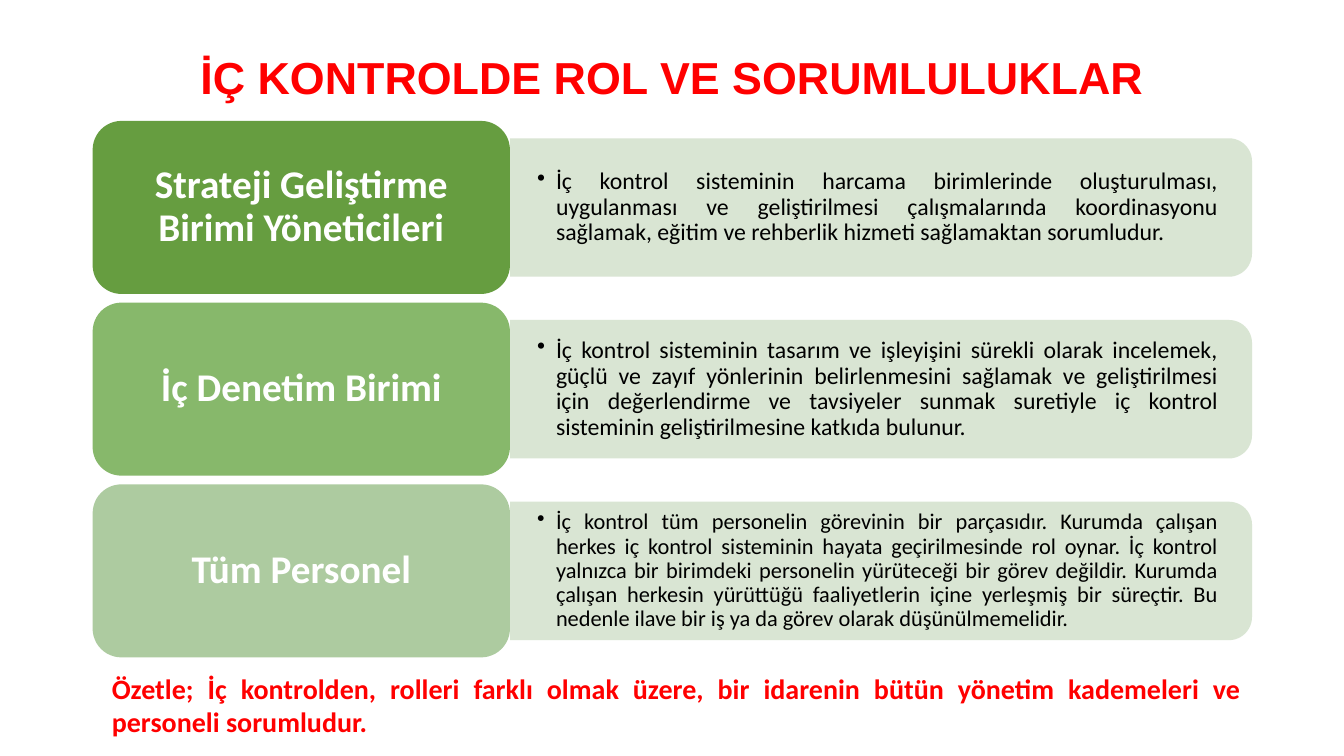
from pptx import Presentation
from pptx.util import Pt
from pptx.dml.color import RGBColor
from pptx.enum.shapes import MSO_SHAPE
from pptx.enum.text import MSO_ANCHOR, PP_ALIGN
from pptx.oxml.ns import qn
from lxml.etree import SubElement

TITLE = "İÇ KONTROLDE ROL VE SORUMLULUKLAR"
ROLES = [
    ("Strateji Geliştirme Birimi Yöneticileri", "dark", 17,
     "İç kontrol sisteminin harcama birimlerinde oluşturulması, uygulanması ve "
     "geliştirilmesi çalışmalarında koordinasyonu sağlamak, eğitim ve rehberlik "
     "hizmeti sağlamaktan sorumludur."),
    ("İç Denetim Birimi", "mid", 17,
     "İç kontrol sisteminin tasarım ve işleyişini sürekli olarak incelemek, güçlü "
     "ve zayıf yönlerinin belirlenmesini sağlamak ve geliştirilmesi için "
     "değerlendirme ve tavsiyeler sunmak suretiyle iç kontrol sisteminin "
     "geliştirilmesine katkıda bulunur."),
    ("Tüm Personel", "light", 16,
     "İç kontrol tüm personelin görevinin bir parçasıdır. Kurumda çalışan herkes "
     "iç kontrol sisteminin hayata geçirilmesinde rol oynar. İç kontrol yalnızca "
     "bir birimdeki personelin yürüteceği bir görev değildir. Kurumda çalışan "
     "herkesin yürüttüğü faaliyetlerin içine yerleşmiş bir süreçtir. Bu nedenle "
     "ilave bir iş ya da görev olarak düşünülmemelidir."),
]
CLOSING = ("Özetle; İç kontrolden, rolleri farklı olmak üzere, bir idarenin bütün "
           "yönetim kademeleri ve personeli sorumludur.")
COLORS = {"dark": "669D40", "mid": "87B86B", "light": "ADCBA0", "bar": "D5E3CF",
          "red": "FF0000", "white": "FFFFFF", "black": "000000"}

LEFT, TOP, PITCH = 66.2, 86.4, 129.8
LABEL_W, LABEL_H = 298.1, 123.6
BAR_W, BAR_H = 530, 98.9
TEXT_W, TEXT_H = 525.2, 89.2


def write(shape, text, size, color, align, bold=True, font="Calibri",
          inset=(7.2, 3.6), space=0.9, anchor=MSO_ANCHOR.MIDDLE):
    """Fill a shape with one formatted paragraph and return the paragraph."""
    frame = shape.text_frame
    frame.word_wrap = True
    frame.vertical_anchor = anchor
    frame.margin_left = frame.margin_right = Pt(inset[0])
    frame.margin_top = frame.margin_bottom = Pt(inset[1])
    para = frame.paragraphs[0]
    para.alignment = align
    para.line_spacing = space
    run = para.add_run()
    run.text = text
    run.font.size = Pt(size)
    run.font.name = font
    run.font.bold = bold
    run.font.color.rgb = RGBColor.from_string(COLORS[color])
    return para


def add_box(slide, x, y, w, h):
    """Add an empty text box."""
    return slide.shapes.add_textbox(Pt(x), Pt(y), Pt(w), Pt(h))


def add_block(slide, kind, x, y, w, h, color):
    """Add a preset shape with a flat fill, no line and no shadow."""
    shape = slide.shapes.add_shape(kind, Pt(x), Pt(y), Pt(w), Pt(h))
    shape.shadow.inherit = False
    shape.fill.solid()
    shape.fill.fore_color.rgb = RGBColor.from_string(COLORS[color])
    shape.line.fill.background()
    return shape


def add_role(slide, top, label, color, size, detail):
    """Add one row: a bar, its bulleted text and its label."""
    edge, mid = LEFT + LABEL_W, top + LABEL_H / 2
    bar = add_block(slide, MSO_SHAPE.ROUND_2_SAME_RECTANGLE,
                    edge + (BAR_W - BAR_H) / 2, mid - BAR_W / 2, BAR_H, BAR_W, "bar")
    bar.rotation = 90
    tint = bar.fill._xPr.find(".//" + qn("a:srgbClr"))
    SubElement(tint, qn("a:alpha"), val="90000")

    box = add_box(slide, edge, mid - TEXT_H / 2, TEXT_W, TEXT_H)
    para = write(box, detail, size, "black", PP_ALIGN.JUSTIFY, False, inset=(19.4, 9.7))
    props = para._p.get_or_add_pPr()
    props.set("marL", str(Pt(13.5)))
    props.set("indent", str(Pt(-13.5)))
    SubElement(props, qn("a:buChar"), char="•")

    block = add_block(slide, MSO_SHAPE.ROUNDED_RECTANGLE, LEFT, top,
                      LABEL_W, LABEL_H, color)
    write(block, label, 28, "white", PP_ALIGN.CENTER, inset=(8.4, 4.2))


def main():
    """Build and save the slide."""
    deck = Presentation()
    deck.slide_width, deck.slide_height = Pt(960), Pt(540)
    slide = deck.slides.add_slide(deck.slide_layouts[6])
    write(add_box(slide, LEFT, 28.8, 828, 56.9), TITLE, 32, "red",
          PP_ALIGN.CENTER, font="Arial")
    for row, role in enumerate(ROLES):
        add_role(slide, TOP + row * PITCH, *role)
    write(add_box(slide, 72.8, 476, 820.8, 55.7), CLOSING, 20, "red",
          PP_ALIGN.JUSTIFY, space=1.0, anchor=MSO_ANCHOR.TOP)
    deck.save("out.pptx")


if __name__ == "__main__":
    main()
